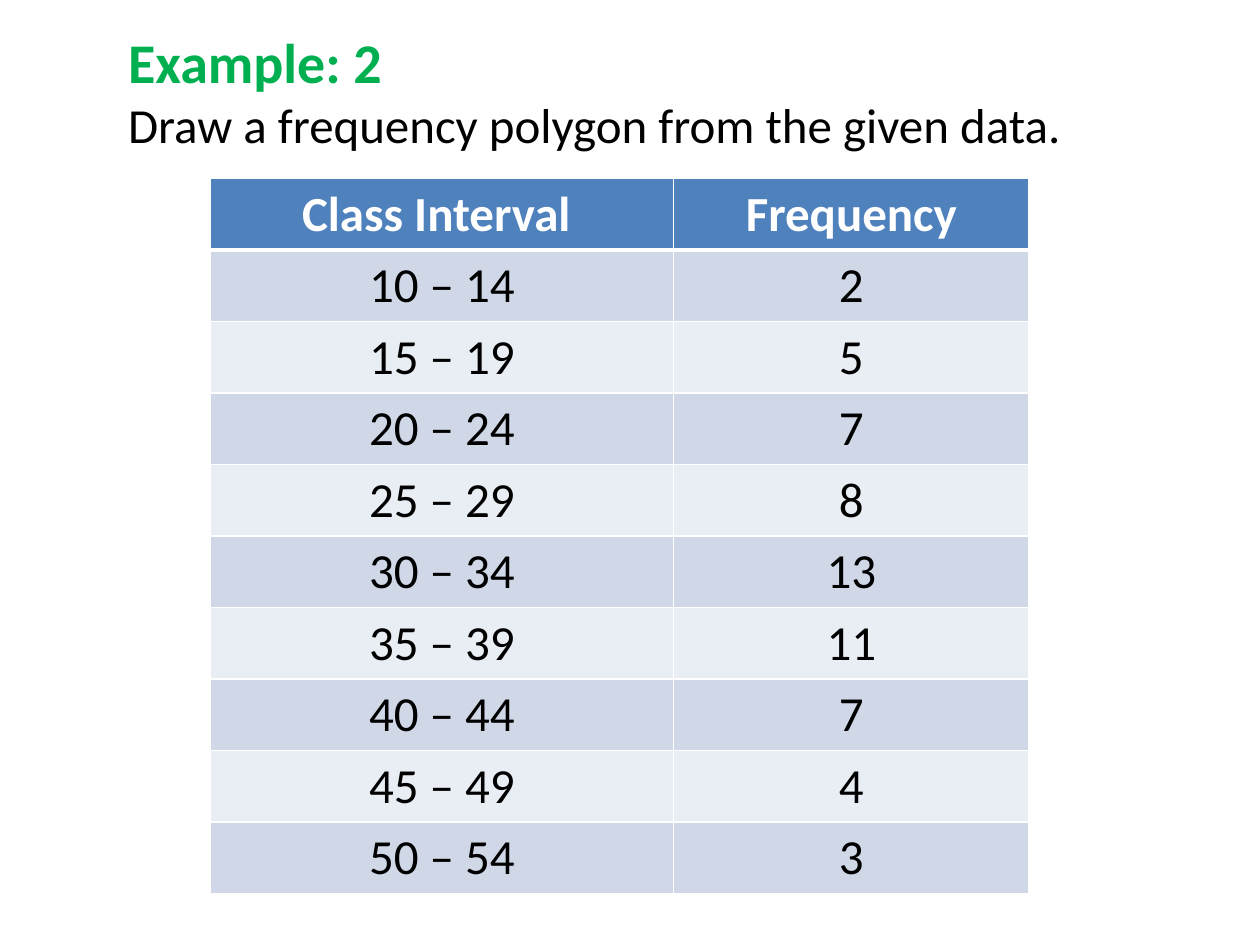
from dataclasses import dataclass

from lxml import etree
from pptx import Presentation
from pptx.dml.color import RGBColor
from pptx.enum.text import MSO_ANCHOR, MSO_AUTO_SIZE, PP_ALIGN
from pptx.oxml.ns import qn
from pptx.util import Pt

LEFT, CENTER = PP_ALIGN.LEFT, PP_ALIGN.CENTER
TOP = MSO_ANCHOR.TOP
FIT_SHAPE = MSO_AUTO_SIZE.SHAPE_TO_FIT_TEXT

WHITE = RGBColor(0xFF, 0xFF, 0xFF)
BLACK = RGBColor(0x00, 0x00, 0x00)
GREEN = RGBColor(0x00, 0xB0, 0x50)
HEADER_BLUE = RGBColor(0x4F, 0x81, 0xBD)
BAND_DARK = RGBColor(0xD0, 0xD8, 0xE8)
BAND_LIGHT = RGBColor(0xE9, 0xED, 0xF4)

TITLE_ONLY_LAYOUT = 5
COLUMN_WIDTHS = (265, 203)
ROW_HEIGHT = 40.82
HEADER = ("Class Interval ", "Frequency")
FIRST_CLASS, CLASS_WIDTH = 10, 5
FREQUENCIES = (2, 5, 7, 8, 13, 11, 7, 4, 3)


@dataclass(frozen=True)
class TextStyle:
    size: float
    color: RGBColor
    bold: bool
    alignment: PP_ALIGN


HEADING = TextStyle(32, GREEN, True, LEFT)
TASK = TextStyle(28, BLACK, False, LEFT)
HEADER_TEXT = TextStyle(28, WHITE, True, CENTER)
BODY_TEXT = TextStyle(28, BLACK, False, CENTER)


def write_paragraph(paragraph, text: str, style: TextStyle) -> None:
    paragraph.alignment = style.alignment
    run = paragraph.add_run()
    run.text = text
    font_format = {"name": "Calibri", "size": Pt(style.size), "bold": style.bold}
    for attribute, value in font_format.items():
        setattr(run.font, attribute, value)
    run.font.color.rgb = style.color


def add_borders(cell, widths: dict[str, float]) -> None:
    properties = cell._tc.get_or_add_tcPr()
    for side, width in widths.items():
        line = etree.SubElement(properties, qn(f"a:ln{side}"), w=str(Pt(width)))
        fill = etree.SubElement(line, qn("a:solidFill"))
        etree.SubElement(fill, qn("a:srgbClr"), val=str(WHITE))


def add_heading(slide) -> None:
    title = slide.shapes.title
    box = {"left": Pt(66), "top": Pt(12), "width": Pt(606), "height": Pt(80)}
    for attribute, value in box.items():
        setattr(title, attribute, value)
    frame = title.text_frame
    frame_format = {"word_wrap": True, "auto_size": FIT_SHAPE, "vertical_anchor": TOP}
    for attribute, value in frame_format.items():
        setattr(frame, attribute, value)
    write_paragraph(frame.paragraphs[0], "Example: 2", HEADING)
    write_paragraph(frame.add_paragraph(),
                    "Draw a frequency polygon from the given data.", TASK)


def add_frequency_table(slide) -> None:
    rows = [HEADER]
    for index, frequency in enumerate(FREQUENCIES):
        lower = FIRST_CLASS + index * CLASS_WIDTH
        rows.append((f"{lower} – {lower + CLASS_WIDTH - 1}", str(frequency)))

    table = slide.shapes.add_table(
        len(rows), len(COLUMN_WIDTHS), Pt(120), Pt(102),
        Pt(sum(COLUMN_WIDTHS)), Pt(ROW_HEIGHT * len(rows))).table
    for column, width in zip(table.columns, COLUMN_WIDTHS):
        column.width = Pt(width)

    for row_index, texts in enumerate(rows):
        table.rows[row_index].height = Pt(ROW_HEIGHT)
        is_header = row_index == 0
        band = BAND_DARK if row_index % 2 else BAND_LIGHT
        # The rule below the header is thicker than the others
        borders = {"L": 1, "R": 1, "T": 3 if row_index == 1 else 1,
                   "B": 3 if is_header else 1}
        for column_index, text in enumerate(texts):
            cell = table.cell(row_index, column_index)
            add_borders(cell, borders)
            cell.fill.solid()
            cell.fill.fore_color.rgb = HEADER_BLUE if is_header else band
            write_paragraph(cell.text_frame.paragraphs[0], text,
                            HEADER_TEXT if is_header else BODY_TEXT)


def main() -> None:
    presentation = Presentation()
    presentation.slide_width, presentation.slide_height = Pt(720), Pt(540)
    slide = presentation.slides.add_slide(
        presentation.slide_layouts[TITLE_ONLY_LAYOUT])
    add_heading(slide)
    add_frequency_table(slide)
    presentation.save("out.pptx")


if __name__ == "__main__":
    main()
